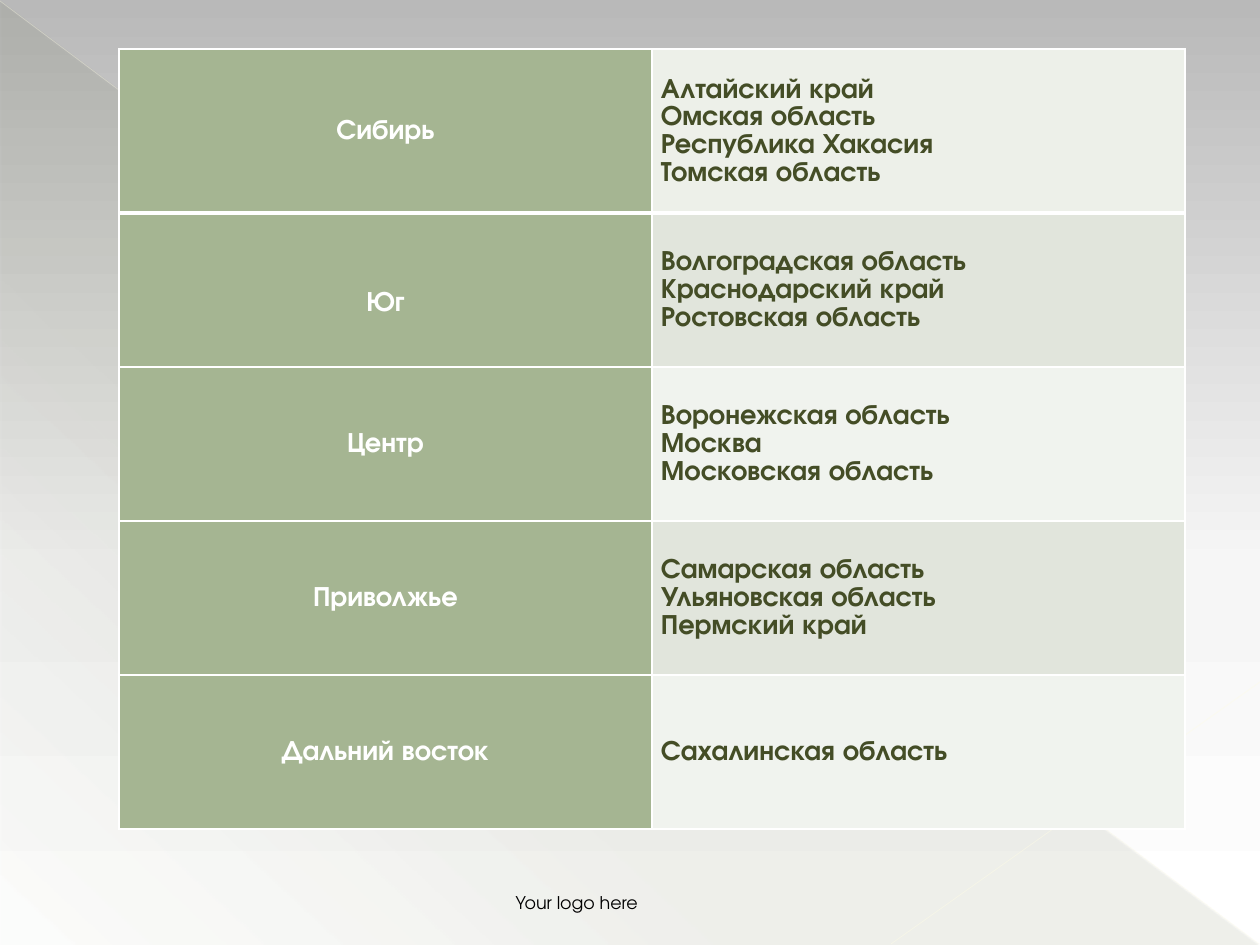
from pptx import Presentation
from pptx.dml.color import RGBColor
from pptx.enum.shapes import MSO_CONNECTOR, MSO_SHAPE
from pptx.enum.text import MSO_ANCHOR as ANCHOR, PP_ALIGN as ALIGN
from pptx.oxml.ns import qn
from pptx.util import Pt
from lxml.etree import SubElement

PX = 914400 // 126
FONT = "TeX Gyre Adventor"
COLORS = {
    "white": "FFFFFF", "black": "000000", "olive": "444D26", "sage": "A5B592",
    "first": "EDF0E9", "dark_band": "E1E5DC", "light_band": "F0F3EE",
    "sky_top": "B9B9B9", "sky_mid": "F6F6F6", "ray": "FFFDE3", "glint": "FFFDE6",
}
REGIONS = [
    ("Сибирь", ["Алтайский край", "Омская область", "Республика Хакасия", "Томская область"]),
    ("Юг", ["Волгоградская область", "Краснодарский край", "Ростовская область"]),
    ("Центр", ["Воронежская область", "Москва", "Московская область"]),
    ("Приволжье", ["Самарская область", "Ульяновская область", "Пермский край"]),
    ("Дальний восток", ["Сахалинская область"]),
]


def px(*values):
    return [round(v * PX) for v in values]


def rgb(name):
    return RGBColor.from_string(COLORS[name])


def add_color(parent, name, opacity=100):
    color = SubElement(parent, qn("a:srgbClr"), val=COLORS[name])
    if opacity < 100:
        SubElement(color, qn("a:alpha"), val=str(opacity * 1000))


def set_gradient(fill, element, angle, stops):
    fill.gradient()
    fill.gradient_angle = 360 - angle
    gs_list = next(element.iter(qn("a:gsLst")))
    for gs in list(gs_list):
        gs_list.remove(gs)
    for position, name, opacity in stops:
        gs = SubElement(gs_list, qn("a:gs"), pos=str(position * 1000))
        add_color(gs, name, opacity)


def add_run(p, text, size, color, bold=False):
    r = p.add_run()
    r.text = text
    r.font.name = FONT
    r.font.size = Pt(size)
    r.font.bold = bold
    r.font.color.rgb = rgb(color)


def add_ray(s, start, end, color, width, opacity):
    line = s.shapes.add_connector(MSO_CONNECTOR.STRAIGHT, *px(*start, *end))
    line.line.width = Pt(width)
    line.line.color.rgb = rgb(color)
    srgb = next(line._element.spPr.iter(qn("a:srgbClr")))
    SubElement(srgb, qn("a:alpha"), val=str(opacity * 1000))
    SubElement(line._element.spPr, qn("a:effectLst"))


def add_backdrop(s, x, y, w, h):
    set_gradient(s.background.fill, s._element, 90,
                 [(0, "sky_top", 100), (60, "sky_mid", 100), (100, "white", 100)])
    sp = s.shapes.add_shape(MSO_SHAPE.RIGHT_TRIANGLE, *px(x + 1, y + 2, w - 2, h - 2))
    sp.shadow.inherit = False
    sp.line.fill.background()
    set_gradient(sp.fill, sp._element.spPr, 133,
                 [(0, "olive", 10), (70, "olive", 8), (100, "olive", 1)])
    add_ray(s, (x, y + 1), (x + w - 1, y + h - 1), "ray", 0.39, 35)
    add_ray(s, (x + w, y + 682), (x + 891, y + h - 1), "glint", 0.47, 45)


def add_footer(s, x, y, w, h):
    tf = s.shapes.add_textbox(*px(x, y, w, h)).text_frame
    tf.word_wrap = True
    tf.vertical_anchor = ANCHOR.BOTTOM
    p = tf.paragraphs[0]
    p.alignment = ALIGN.RIGHT
    add_run(p, "Your logo here", 10, "black")


def format_cell(cell, lines, fill, color, align, bottom):
    tcPr = cell._tc.get_or_add_tcPr()
    for side, width in (("L", 1), ("R", 1), ("T", 1), ("B", bottom)):
        ln = SubElement(tcPr, qn(f"a:ln{side}"), w=str(Pt(width)))
        add_color(SubElement(ln, qn("a:solidFill")), "white")
    cell.fill.solid()
    cell.fill.fore_color.rgb = rgb(fill)
    cell.vertical_anchor = ANCHOR.MIDDLE
    cell.margin_left, cell.margin_right, cell.margin_top, cell.margin_bottom = px(9, 9, 0, 0)
    tf = cell.text_frame
    for i, text in enumerate(lines):
        p = tf.add_paragraph() if i else tf.paragraphs[0]
        p.alignment = align
        p.line_spacing = 1.07
        add_run(p, text, 16, color, True)


def add_regions_table(s, x, y, w, h):
    table = s.shapes.add_table(len(REGIONS), 2, *px(x, y, w, h)).table
    for column in table.columns:
        column.width = px(w / 2)[0]
    first_height = 164
    row_height = (h - first_height) / (len(REGIONS) - 1)
    for i, (region, areas) in enumerate(REGIONS):
        table.rows[i].height = px(row_height if i else first_height)[0]
        band = ("light_band", "dark_band")[i % 2] if i else "first"
        bottom = 1 if i else 3
        format_cell(table.cell(i, 0), [region], "sage", "white", ALIGN.CENTER, bottom)
        format_cell(table.cell(i, 1), areas, band, "olive", ALIGN.LEFT, bottom)
    table.cell(1, 0).margin_top = px(26)[0]


def main():
    prs = Presentation()
    prs.slide_width, prs.slide_height = px(1260, 945)
    s = prs.slides.add_slide(prs.slide_layouts[6])
    add_backdrop(s, 0, 0, 1260, 945)
    add_footer(s, 63, 877, 587, 42)
    add_regions_table(s, 119, 49, 1066, 780)
    prs.save("out.pptx")


if __name__ == "__main__":
    main()
